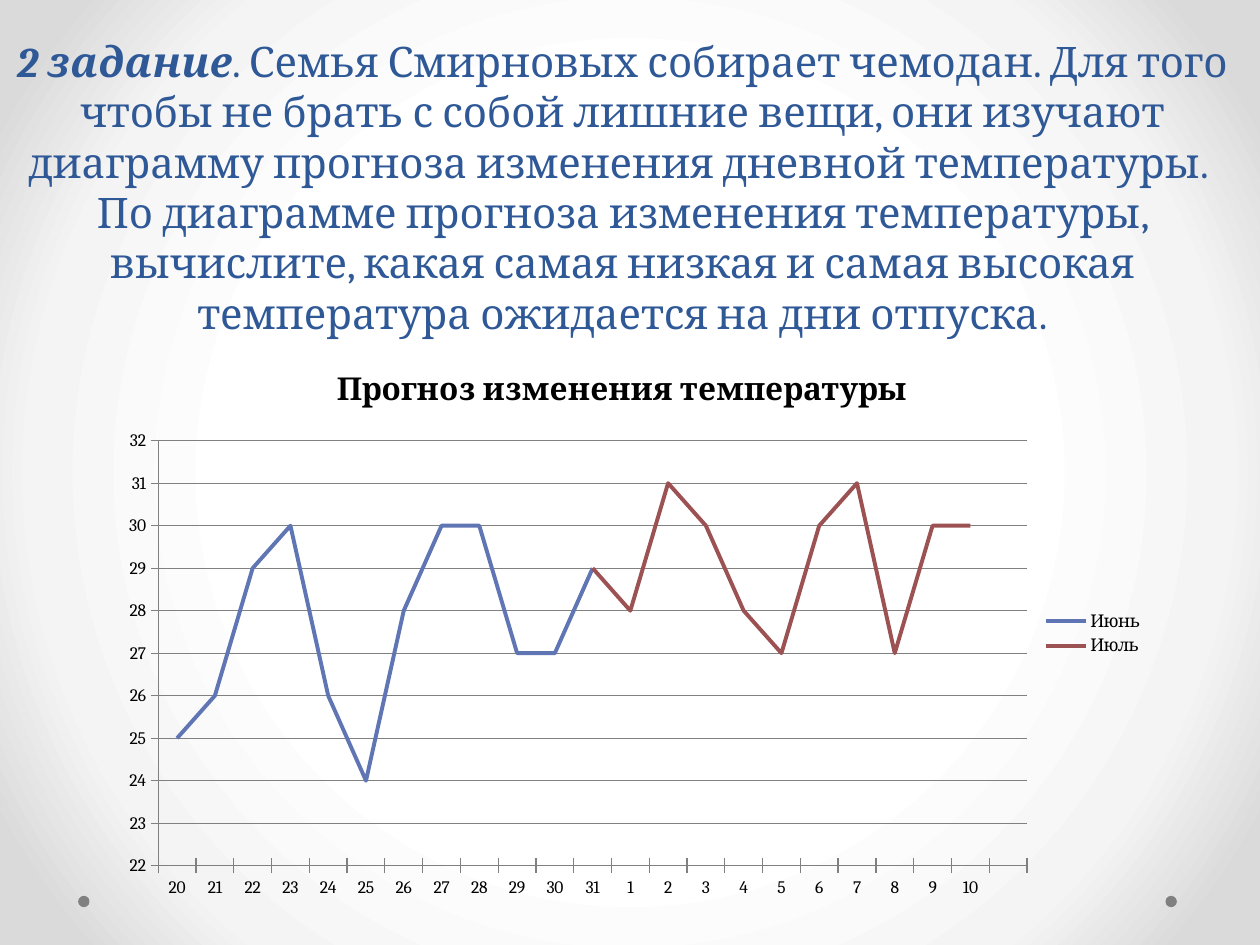
import pptx
import pptx.chart.data
import pptx.dml.color
import pptx.enum.chart
import pptx.enum.shapes
import pptx.enum.text
import pptx.oxml
import pptx.oxml.ns
import pptx.util

RGBColor = pptx.dml.color.RGBColor
BLACK = RGBColor(0x00, 0x00, 0x00)
GRAY = RGBColor(0x80, 0x80, 0x80)
HEADING = RGBColor(0x2F, 0x58, 0x97)
JUNE_BLUE = RGBColor(0x60, 0x76, 0xB4)
JULY_RED = RGBColor(0x9C, 0x52, 0x52)
GLOW = [(50, RGBColor(0xFF, 0xFF, 0xFF)), (76, RGBColor(0xF4, 0xF4, 0xF4)),
        (92, RGBColor(0xDA, 0xDA, 0xDA))]
FONT = "Cambria"


def add_text(paragraph, text, size=24, color=HEADING, bold=False, italic=False):
    run = paragraph.add_run()
    run.text = text
    run.font.name = FONT
    run.font.size = pptx.util.Pt(size)
    run.font.color.rgb = color
    run.font.bold = bold
    run.font.italic = italic


deck = pptx.Presentation()
deck.slide_width = pptx.util.Inches(10)
deck.slide_height = pptx.util.Inches(7.5)
W, H = deck.slide_width, deck.slide_height
slide = deck.slides.add_slide(deck.slide_layouts[5])

backdrop = slide.background.fill
backdrop.gradient()
stops = "".join(f'<a:gs pos="{share * 1000}"><a:srgbClr val="{color}"/></a:gs>'
                for share, color in GLOW)
glow = pptx.oxml.parse_xml(
    f'<a:gradFill {pptx.oxml.ns.nsdecls("a")} rotWithShape="1"><a:gsLst>{stops}</a:gsLst>'
    '<a:path path="circle"><a:fillToRect l="50000" t="50000" r="50000" b="50000"/></a:path>'
    '</a:gradFill>')
old_glow = slide.element.find(".//" + pptx.oxml.ns.qn("a:gradFill"))
old_glow.getparent().replace(old_glow, glow)

for left in (0.925, 0.062):
    dot = slide.shapes.add_shape(
        pptx.enum.shapes.MSO_SHAPE.OVAL,
        int(W * left), int(H * 0.948), int(W * 0.009), int(H * 0.012))
    dot.shadow.inherit = False
    dot.fill.solid()
    dot.fill.fore_color.rgb = GRAY
    dot.line.fill.background()

task = slide.shapes.title
task.left, task.top = 0, int(H * 0.028)
task.width, task.height = int(W * 0.988), int(H * 0.336)
task.text_frame.word_wrap = True
task.text_frame.auto_size = pptx.enum.text.MSO_AUTO_SIZE.NONE
task.text_frame.vertical_anchor = pptx.enum.text.MSO_ANCHOR.BOTTOM
wording = task.text_frame.paragraphs[0]
wording.alignment = pptx.enum.text.PP_ALIGN.CENTER
add_text(wording, "2 задание", bold=True, italic=True)
add_text(wording, ". Семья Смирновых собирает чемодан. Для того чтобы не брать с собой "
                  "лишние вещи, они изучают диаграмму прогноза изменения дневной температуры. ")
wording.add_line_break()
add_text(wording, "По диаграмме прогноза изменения температуры, вычислите, какая самая "
                  "низкая и самая высокая температура ожидается на дни отпуска.")

june = [25, 26, 29, 30, 26, 24, 28, 30, 30, 27, 27, 29]
july = [29, 28, 31, 30, 28, 27, 30, 31, 27, 30, 30]
forecast = pptx.chart.data.CategoryChartData()
forecast.categories = [str(day) for day in [*range(20, 32), *range(1, 11)]] + [""]
forecast.add_series("Июнь", june + [None] * 11)
forecast.add_series("Июль", [None] * 11 + july + [None])
chart = slide.shapes.add_chart(
    pptx.enum.chart.XL_CHART_TYPE.LINE, int(W * 0.075), int(H * 0.364),
    int(W * 0.843), int(H * 0.613), forecast).chart
chart.font.name = FONT
chart.font.size = pptx.util.Pt(10)
chart.font.color.rgb = BLACK

chart.has_title = True
add_text(chart.chart_title.text_frame.paragraphs[0], "Прогноз изменения температуры ",
         size=18, color=BLACK, bold=True)
chart.chart_title.include_in_layout = False
chart.has_legend = True
chart.legend.position = pptx.enum.chart.XL_LEGEND_POSITION.RIGHT
chart.legend.include_in_layout = False

plot = chart.plots[0]
plot.vary_by_categories = False
for month, color in zip(plot.series, (JUNE_BLUE, JULY_RED)):
    month.smooth = False
    month.marker.style = pptx.enum.chart.XL_MARKER_STYLE.NONE
    month.format.line.color.rgb = color
    month.format.line.width = pptx.util.Pt(2.25)

days, degrees = chart.category_axis, chart.value_axis
for axis in (days, degrees):
    axis.major_tick_mark = pptx.enum.chart.XL_TICK_MARK.CROSS
    axis.format.line.color.rgb = GRAY
degrees.minimum_scale = 22
degrees.maximum_scale = 32
degrees.major_unit = 1
degrees.has_major_gridlines = True
degrees.major_gridlines.format.line.color.rgb = GRAY

plot_area = chart.element.find(".//" + pptx.oxml.ns.qn("c:plotArea"))
for old_layout in plot_area.findall(pptx.oxml.ns.qn("c:layout")):
    plot_area.remove(old_layout)
places = "".join(f'<c:{key} val="{value}"/>' for key, value in [
    ("layoutTarget", "inner"), ("xMode", "edge"), ("yMode", "edge"),
    ("x", 0.06), ("y", 0.167), ("w", 0.818), ("h", 0.734)])
plot_area.insert(0, pptx.oxml.parse_xml(
    f'<c:layout {pptx.oxml.ns.nsdecls("c")}><c:manualLayout>{places}</c:manualLayout></c:layout>'))

deck.save("out.pptx")
